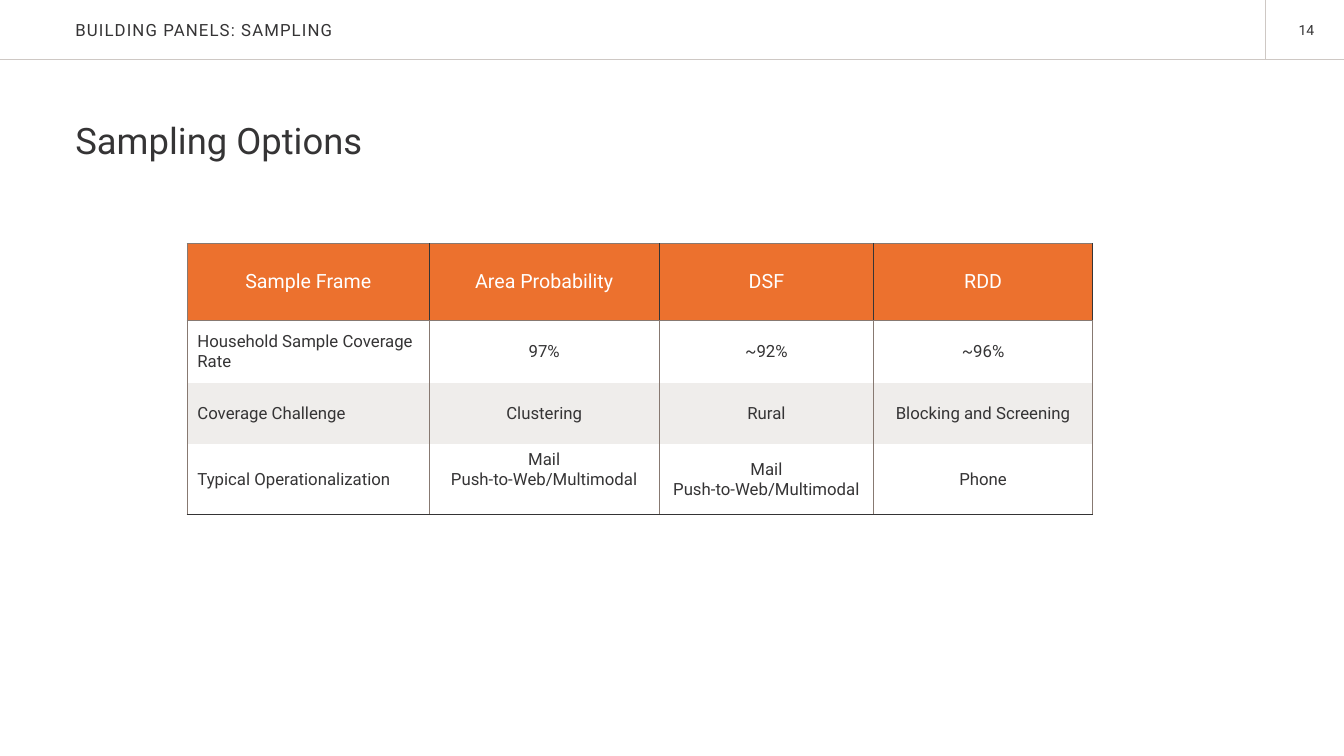
from lxml import etree
from pptx import Presentation
from pptx.dml.color import RGBColor
from pptx.enum.shapes import MSO_CONNECTOR as CONN
from pptx.enum.text import MSO_ANCHOR as ANCHOR, PP_ALIGN as ALIGN
from pptx.oxml.ns import qn
from pptx.util import Cm, Pt

# Content
SECTION = "BUILDING PANELS: SAMPLING"
TITLE = "Sampling Options"
PAGE = "14"
ROWS = [
    ("Sample Frame", "Area Probability", "DSF", "RDD"),
    ("Household Sample Coverage Rate", "97%", "~92%", "~96%"),
    ("Coverage Challenge", "Clustering", "Rural", "Blocking and Screening"),
    ("Typical Operationalization", "Mail\nPush-to-Web/Multimodal",
     "Mail\nPush-to-Web/Multimodal", "Phone"),
]

# Layout in centimetres
SLIDE_W, SLIDE_H = 33.87, 19.05
BAR_H, PAGE_X = 1.5, 31.9
LEFT = 1.9
TABLE_X, TABLE_Y = 4.72, 6.14
COL_W = (6.1, 5.79, 5.41, 5.51)
ROW_H = (1.94, 1.56, 1.56, 1.75)
RAISED_CELL, RAISED_BOTTOM = (3, 1), 0.62

# Style
FONT = "Roboto"
INK, WHITE, ORANGE, BAND = "353435", "FFFFFF", "EC712E", "EFEDEB"
RULE, BORDER = "CEC8C4", "877971"
FILLS = (ORANGE, WHITE, BAND, WHITE)


def color(value):
    return RGBColor.from_string(value)


def add_text(p, text, size, ink=INK, align=ALIGN.LEFT):
    p.alignment = align
    for i, line in enumerate(text.split("\n")):
        if i:
            p.add_line_break()
        r = p.add_run()
        r.text = line
        r.font.name, r.font.size, r.font.bold = FONT, Pt(size), False
        r.font.color.rgb = color(ink)
    return r


def add_box(s, text, x, y, w, h, size, anchor=ANCHOR.TOP, align=ALIGN.LEFT, inset=(0, 0)):
    tf = s.shapes.add_textbox(Cm(x), Cm(y), Cm(w), Cm(h)).text_frame
    tf.word_wrap = True
    tf.vertical_anchor = anchor
    tf.margin_left = tf.margin_right = Cm(inset[0])
    tf.margin_top = tf.margin_bottom = Cm(inset[1])
    return add_text(tf.paragraphs[0], text, size, align=align)


def add_rule(s, x1, y1, x2, y2):
    line = s.shapes.add_connector(CONN.STRAIGHT, Cm(x1), Cm(y1), Cm(x2), Cm(y2))
    line.line.color.rgb = color(RULE)
    line.line.width = Pt(0.65)
    etree.SubElement(line._element.spPr, qn("a:effectLst"))


def set_borders(cell, edges):
    """Edges are colours for left, right, top, bottom; None hides the edge."""
    tc_pr = cell._tc.get_or_add_tcPr()
    for i, (side, ink) in enumerate(zip("LRTB", edges)):
        ln = etree.Element(qn(f"a:ln{side}"), w=str(Pt(1)))
        if ink:
            fill = etree.SubElement(ln, qn("a:solidFill"))
            etree.SubElement(fill, qn("a:srgbClr"), val=ink)
        else:
            etree.SubElement(ln, qn("a:noFill"))
        tc_pr.insert(i, ln)


def add_table(s):
    frame = s.shapes.add_table(len(ROWS), len(COL_W), Cm(TABLE_X), Cm(TABLE_Y),
                               Cm(sum(COL_W)), Cm(sum(ROW_H)))
    table = frame.table
    table.first_row = table.horz_banding = False
    for column, w in zip(table.columns, COL_W):
        column.width = Cm(w)
    for row, h in zip(table.rows, ROW_H):
        row.height = Cm(h)
    last = len(ROWS) - 1
    for i, texts in enumerate(ROWS):
        for j, text in enumerate(texts):
            cell = table.cell(i, j)
            head = i == 0
            cell.fill.solid()
            cell.fill.fore_color.rgb = color(FILLS[i])
            cell.vertical_anchor = ANCHOR.MIDDLE
            if (i, j) == RAISED_CELL:
                cell.margin_bottom = Cm(RAISED_BOTTOM)
            add_text(cell.text_frame.paragraphs[0], text, 14 if head else 12,
                     WHITE if head else INK,
                     ALIGN.CENTER if head or j else ALIGN.LEFT)
            set_borders(cell, (INK if head and j else BORDER,
                               INK if head else BORDER,
                               BORDER if i < 2 else None,
                               BORDER if head else INK if i == last else None))


def main():
    prs = Presentation()
    prs.slide_width, prs.slide_height = Cm(SLIDE_W), Cm(SLIDE_H)
    s = prs.slides.add_slide(prs.slide_layouts[6])

    # Top bar
    add_box(s, PAGE, 32.1, 0.41, 1.27, 0.69, 10, align=ALIGN.RIGHT, inset=(0.25, 0.13))
    add_rule(s, 0, BAR_H, SLIDE_W, BAR_H)
    add_rule(s, PAGE_X, 0, PAGE_X, BAR_H)
    r = add_box(s, SECTION, LEFT, 0, 23.62, 1.52, 12, anchor=ANCHOR.MIDDLE)
    r.font._element.set("spc", "80")

    # Title and table
    add_box(s, TITLE, LEFT, 2.97, 27.5, 2.54, 26)
    add_table(s)
    prs.save("out.pptx")


if __name__ == "__main__":
    main()
